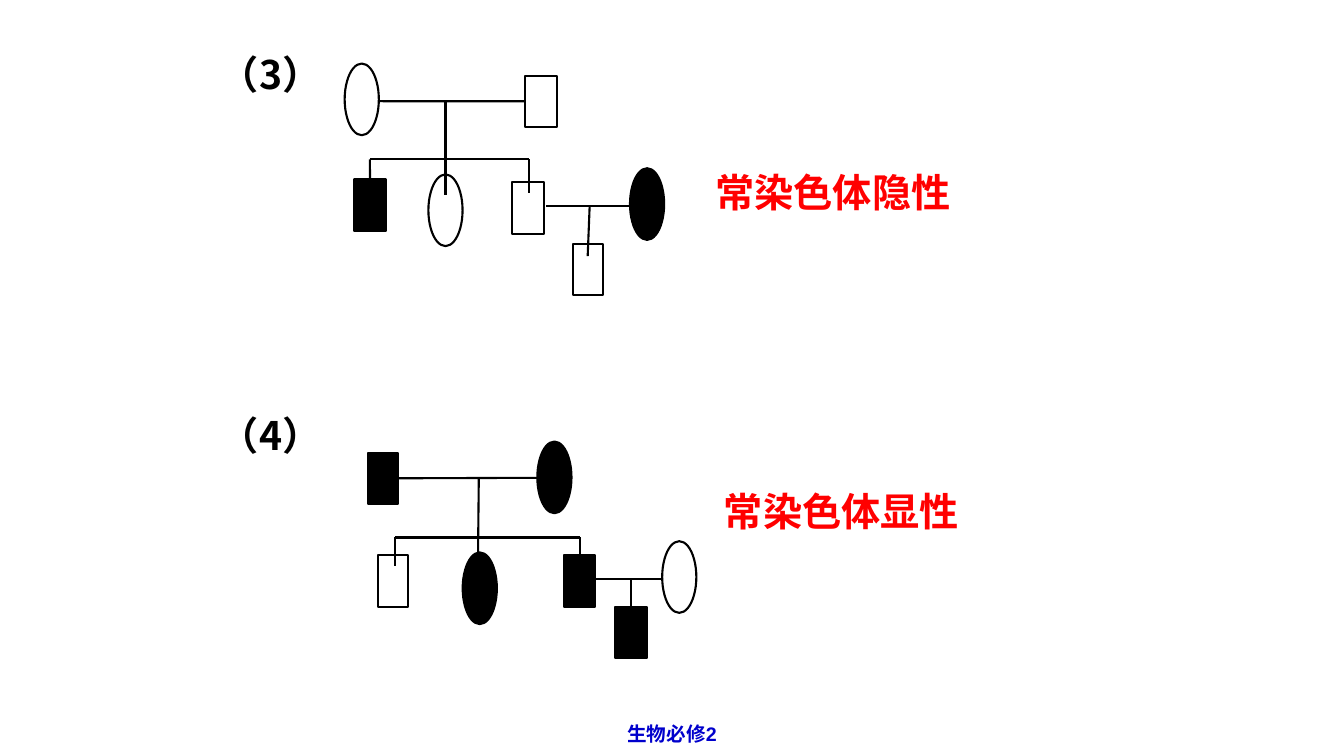
import pptx
import pptx.dml.color
import pptx.enum.shapes
import pptx.enum.text
import pptx.oxml.ns
import pptx.util
from lxml import etree

Pt = pptx.util.Pt
qn = pptx.oxml.ns.qn
ALIGN = pptx.enum.text.PP_ALIGN
KIND = pptx.enum.shapes.MSO_SHAPE
CJK = "Noto Sans CJK SC"
BLACK, WHITE, RED, BLUE = "000000", "FFFFFF", "FF0000", "0000CC"
LEFT_SIDE, RIGHT_SIDE = 1, 3


def color(value):
    return pptx.dml.color.RGBColor.from_string(value)


class Pedigree:
    """Slide with the shared style of pedigree symbols, lines and labels."""
    line_width = 1.5
    sizes = {KIND.RECTANGLE: (23, 36.7), KIND.OVAL: (24.4, 51.2)}

    def __init__(self, slide):
        self.s = slide

    def label(self, text, x, y, w, h, fill, size=28, font=CJK, align=ALIGN.LEFT):
        tf = self.s.shapes.add_textbox(Pt(x), Pt(y), Pt(w), Pt(h)).text_frame
        frame = {"word_wrap": True, "margin_top": 0, "margin_bottom": 0,
                 "auto_size": pptx.enum.text.MSO_AUTO_SIZE.SHAPE_TO_FIT_TEXT}
        for key, value in frame.items():
            setattr(tf, key, value)
        p = tf.paragraphs[0]
        p.alignment = align
        r = p.add_run()
        r.text = text
        for key, value in {"size": Pt(size), "name": font, "bold": True}.items():
            setattr(r.font, key, value)
        r.font.color.rgb = color(fill)
        etree.SubElement(r.font._element, qn("a:ea"), typeface=CJK)

    def stroke(self, line):
        line.color.rgb = color(BLACK)
        line.width = Pt(self.line_width)

    def symbol(self, group, kind, x, y, fill, width=None):
        w, h = self.sizes[kind]
        sp = group.shapes.add_shape(kind, Pt(x), Pt(y), Pt(width or w), Pt(h))
        sp.shadow.inherit = False
        sp.fill.solid()
        sp.fill.fore_color.rgb = color(fill)
        self.stroke(sp.line)
        return sp

    def line(self, group, x1, y1, x2, y2):
        cxn = group.shapes.add_connector(
            pptx.enum.shapes.MSO_CONNECTOR.STRAIGHT, Pt(x1), Pt(y1), Pt(x2), Pt(y2))
        self.stroke(cxn.line)
        etree.SubElement(cxn._element.spPr, qn("a:effectLst"))
        return cxn

    def family(self, people, lines):
        """Draw one family; return its symbols and lines by position."""
        group = self.s.shapes.add_group_shape()
        return ([self.symbol(group, *person) for person in people],
                [self.line(group, *ends) for ends in lines])


MALE, FEMALE = KIND.RECTANGLE, KIND.OVAL
NARROW = 21.6

RECESSIVE_PEOPLE = [
    (MALE, 375.1, 54, WHITE),
    (FEMALE, 246.2, 45.4, WHITE),
    (MALE, 252.7, 128.2, BLACK),
    (FEMALE, 306, 124.6, WHITE),
    (MALE, 365.8, 130.3, WHITE),
    (FEMALE, 450, 120.2, BLACK),
    (MALE, 409, 174.2, WHITE, NARROW),
]
RECESSIVE_LINES = [
    (270.7, 72.3, 375.1, 72.3),
    (264.2, 113.8, 378, 113.8),
    (264.2, 113.8, 264.4, 136.8),
    (318.2, 72.3, 318.2, 139),
    (378, 113.8, 378, 138.2),
    (390.2, 146.9, 450, 146.9),
    (421.2, 146.9, 419.8, 182.9),
]
DOMINANT_PEOPLE = [
    (MALE, 262.8, 323.3, BLACK, NARROW),
    (FEMALE, 383.8, 315.4, BLACK),
    (MALE, 270, 396.7, WHITE, NARROW),
    (FEMALE, 330.5, 394.6, BLACK),
    (MALE, 403.2, 396.7, BLACK, NARROW),
    (FEMALE, 473, 386.6, WHITE),
    (MALE, 439.2, 433.4, BLACK),
]
DOMINANT_LINES = [
    (284.4, 341.3, 384.5, 341.3),
    (282.2, 383.9, 414, 383.9),
    (282.2, 383.9, 282.2, 404.6),
    (342, 341.3, 341.3, 412.6),
    (414, 383.9, 414, 404.6),
    (424.8, 413.3, 473, 413.3),
    (450.7, 413.3, 450.7, 442.1),
]


def main():
    prs = pptx.Presentation()
    prs.slide_width, prs.slide_height = Pt(960), Pt(540)
    chart = Pedigree(prs.slides.add_slide(prs.slide_layouts[6]))

    chart.label("常染色体隐性", 504, 120, 324, 41, RED)
    chart.label("（3）", 150, 36, 184, 41, BLACK)
    chart.label("常染色体显性", 510, 348, 330, 41, RED)
    chart.label("（4）", 150, 294, 174, 41, BLACK)

    people, lines = chart.family(RECESSIVE_PEOPLE, RECESSIVE_LINES)
    lines[0].end_connect(people[0], LEFT_SIDE)
    people, lines = chart.family(DOMINANT_PEOPLE, DOMINANT_LINES)
    lines[0].begin_connect(people[0], RIGHT_SIDE)

    chart.label("生物必修2", 270, 516, 420, 24, BLUE, 14, "Arial", ALIGN.CENTER)
    prs.save("out.pptx")


if __name__ == "__main__":
    main()
